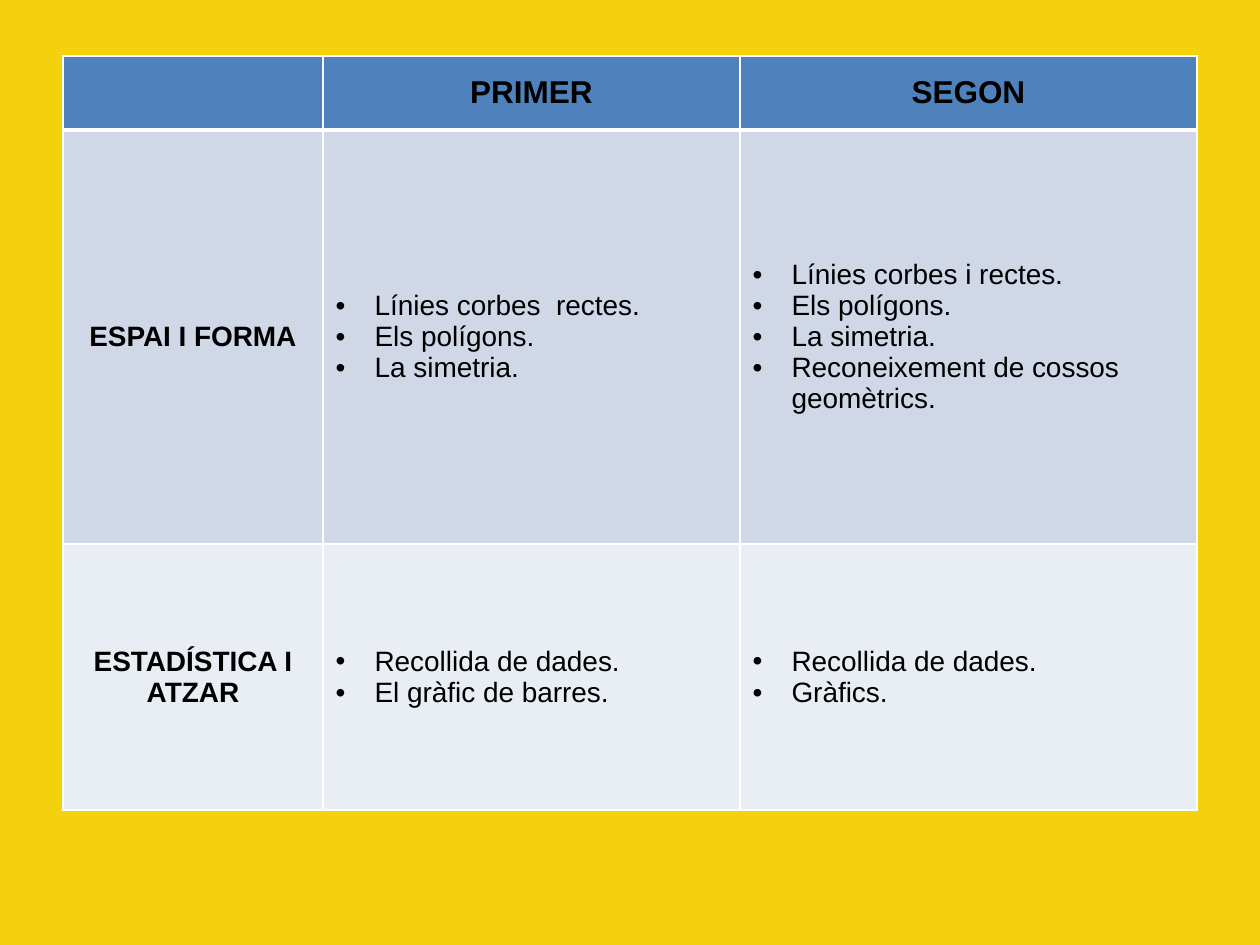
from lxml.etree import SubElement
from pptx import Presentation
from pptx.dml.color import RGBColor
from pptx.enum.text import MSO_ANCHOR, PP_ALIGN
from pptx.oxml.ns import qn
from pptx.util import Emu, Pt

EMU_PER_PX = 914400 / 126
YELLOW = RGBColor(0xF3, 0xD2, 0x0D)
BLUE = RGBColor(0x4F, 0x81, 0xBD)
LIGHT_BLUE = RGBColor(0xD0, 0xD8, 0xE8)
PALE_BLUE = RGBColor(0xE9, 0xED, 0xF4)
WHITE = RGBColor(0xFF, 0xFF, 0xFF)
BLACK = RGBColor(0x00, 0x00, 0x00)

COLUMN_WIDTHS = [260, 417, 457]
ROW_HEIGHTS = [74, 414, 266]
ROW_FILLS = [BLUE, LIGHT_BLUE, PALE_BLUE]
BULLET_INDENT = 39
HEADING = {"size": Pt(18), "bold": True}
TOPIC = {"size": Pt(16), "bold": True}
ITEM = {"size": Pt(16), "bold": False}

HEADINGS = ["", "PRIMER", "SEGON"]
TOPICS = [
    ("ESPAI I FORMA",
     ["Línies corbes  rectes.", "Els polígons.", "La simetria."],
     ["Línies corbes i rectes.", "Els polígons.", "La simetria.",
      "Reconeixement de cossos geomètrics."]),
    ("ESTADÍSTICA I ATZAR",
     ["Recollida de dades.", "El gràfic de barres."],
     ["Recollida de dades.", "Gràfics."]),
]


def px(n):
    return Emu(round(n * EMU_PER_PX))


def set_borders(cell, bottom_width):
    tc_pr = cell._tc.get_or_add_tcPr()
    widths = {"a:lnL": 1, "a:lnR": 1, "a:lnT": 1, "a:lnB": bottom_width}
    for tag, width in widths.items():
        ln = SubElement(tc_pr, qn(tag), w=str(Pt(width)))
        fill = SubElement(ln, qn("a:solidFill"))
        SubElement(fill, qn("a:srgbClr"), val=str(WHITE))


def style_cell(cell, color, bottom_width):
    set_borders(cell, bottom_width)
    cell.fill.solid()
    cell.fill.fore_color.rgb = color
    cell.vertical_anchor = MSO_ANCHOR.MIDDLE


def add_run(p, text, font):
    r = p.add_run()
    r.text = text
    for name, value in {"name": "Arial", **font}.items():
        setattr(r.font, name, value)
    r.font.color.rgb = BLACK


def write_label(cell, text, font):
    p = cell.text_frame.paragraphs[0]
    p.alignment = PP_ALIGN.CENTER
    if text:
        add_run(p, text, font)


def write_bullets(cell, items):
    tf = cell.text_frame
    for i, item in enumerate(items):
        p = tf.add_paragraph() if i else tf.paragraphs[0]
        p.alignment = PP_ALIGN.LEFT
        p_pr = p._p.get_or_add_pPr()
        p_pr.set("marL", str(px(BULLET_INDENT)))
        p_pr.set("indent", str(-px(BULLET_INDENT)))
        SubElement(p_pr, qn("a:buFont"), typeface="Arial")
        SubElement(p_pr, qn("a:buChar"), char="•")
        add_run(p, item, ITEM)


def add_grid(s):
    table = s.shapes.add_table(
        len(ROW_HEIGHTS), len(COLUMN_WIDTHS), px(63), px(56),
        px(sum(COLUMN_WIDTHS)), px(sum(ROW_HEIGHTS))).table
    for column, width in zip(table.columns, COLUMN_WIDTHS):
        column.width = px(width)
    for i, (row, height) in enumerate(zip(table.rows, ROW_HEIGHTS)):
        row.height = px(height)
        for cell in row.cells:
            style_cell(cell, ROW_FILLS[i], 1 if i else 3)
    return table


def main():
    prs = Presentation()
    prs.slide_width, prs.slide_height = px(1260), px(945)
    s = prs.slides.add_slide(prs.slide_layouts[6])
    s.background.fill.solid()
    s.background.fill.fore_color.rgb = YELLOW

    table = add_grid(s)
    for j, heading in enumerate(HEADINGS):
        write_label(table.cell(0, j), heading, HEADING)
    for i, (topic, *lists) in enumerate(TOPICS, start=1):
        write_label(table.cell(i, 0), topic, TOPIC)
        for j, items in enumerate(lists, start=1):
            write_bullets(table.cell(i, j), items)
    prs.save("out.pptx")


if __name__ == "__main__":
    main()
